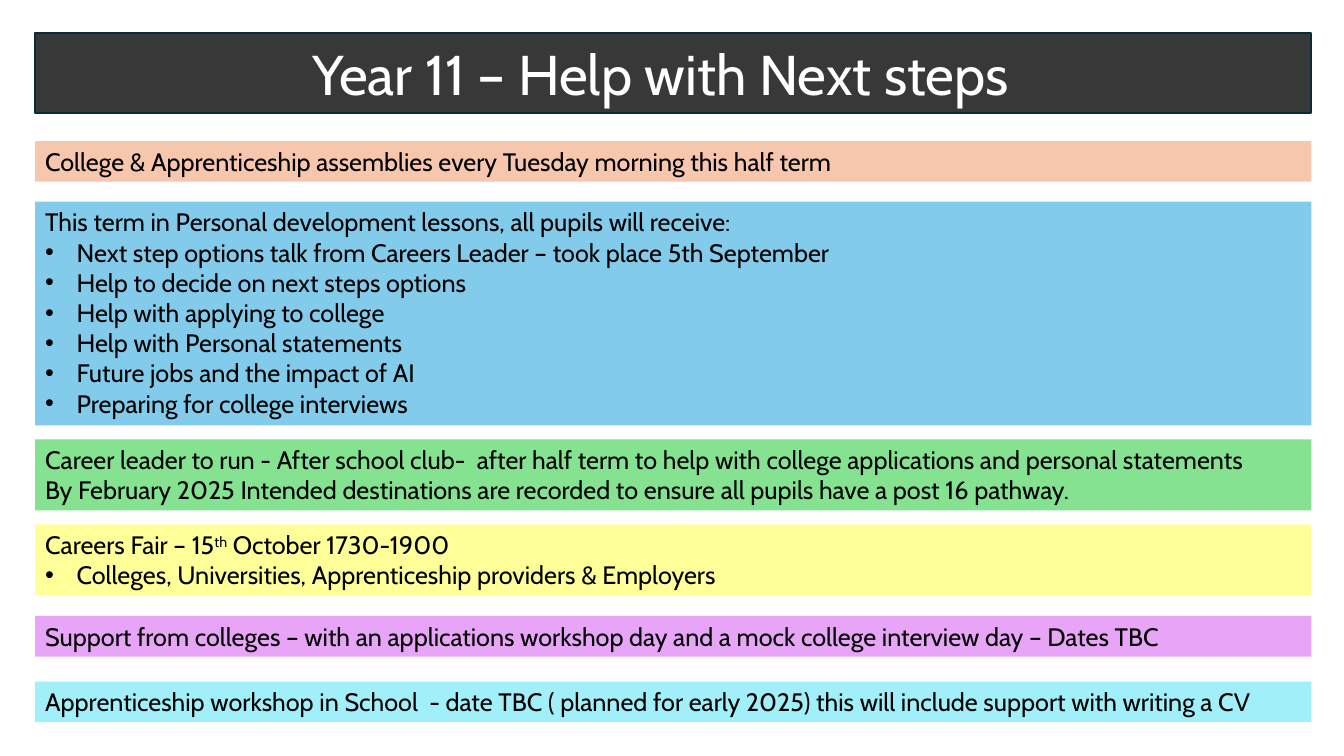
from pptx import Presentation
from pptx.dml.color import RGBColor
from pptx.enum.shapes import MSO_SHAPE
from pptx.enum.text import MSO_ANCHOR, MSO_AUTO_SIZE, PP_ALIGN
from pptx.oxml.ns import qn
from pptx.util import Pt
from lxml import etree

RECT = MSO_SHAPE.RECTANGLE
TOP, MIDDLE = MSO_ANCHOR.TOP, MSO_ANCHOR.MIDDLE
GROW, FIXED = MSO_AUTO_SIZE.SHAPE_TO_FIT_TEXT, MSO_AUTO_SIZE.NONE
LEFT, CENTER = PP_ALIGN.LEFT, PP_ALIGN.CENTER

TITLE = "Year 11 – Help with Next steps"
# Each band: top, colour, plain lines, bulleted lines.
# A line is a string, or a tuple whose second part is raised.
BANDS = [
    (100.8, "peach",
     ["College & Apprenticeship assemblies every Tuesday morning this half term"], []),
    (144, "blue",
     ["This term in Personal development lessons, all pupils will receive:"],
     ["Next step options talk from Careers Leader – took place 5th September",
      "Help to decide on next steps options",
      "Help with applying to college",
      "Help with Personal statements",
      "Future jobs and the impact of AI",
      "Preparing for college interviews"]),
    (313.8, "green",
     ["Career leader to run - After school club-  after half term to help with "
      "college applications and personal statements",
      "By February 2025 Intended destinations are recorded to ensure all pupils "
      "have a post 16 pathway."], []),
    (374.6, "yellow",
     [("Careers Fair – 15", "th", " October 1730-1900")],
     ["Colleges, Universities, Apprenticeship providers & Employers"]),
    (440, "violet",
     ["Support from colleges – with an applications workshop day and a mock "
      "college interview day – Dates TBC"], []),
    (486.8, "cyan",
     ["Apprenticeship workshop in School  - date TBC ( planned for early 2025) "
      "this will include support with writing a CV"], []),
]
COLORS = {
    "white": "FFFFFF", "black": "000000", "dark": "383838", "edge": "092A39",
    "peach": "F6C6AD", "blue": "83CBEB", "green": "84E291",
    "yellow": "FFFF99", "violet": "E8A4F6", "cyan": "A1EFF9",
}
FONT = "Cabin"
SIDE, WIDTH = 25.2, 911.5
LINE, INSET, INDENT = 21.8, 3.6, 22.5


def color(name):
    return RGBColor.from_string(COLORS[name])


def place(shape, top, height):
    shape.left, shape.top = Pt(SIDE), Pt(top)
    shape.width, shape.height = Pt(WIDTH), Pt(height)


def paint(shape, fill):
    shape.fill.solid()
    shape.fill.fore_color.rgb = color(fill)


def style(para, size, ink, align):
    para.alignment = align
    for run in para.runs:
        run.font.name = FONT
        run.font.size = Pt(size)
        run.font.color.rgb = color(ink)


def add_bullet(para):
    props = para._p.get_or_add_pPr()
    props.set("marL", str(Pt(INDENT)))
    props.set("indent", str(-Pt(INDENT)))
    etree.SubElement(props, qn("a:buFont")).set("typeface", "Arial")
    etree.SubElement(props, qn("a:buChar")).set("char", "•")


def write(para, line):
    parts = (line,) if isinstance(line, str) else line
    for i, part in enumerate(parts):
        run = para.add_run()
        run.text = part
        if i == 1:
            run._r.get_or_add_rPr().set("baseline", "30000")


def add_title(slide):
    title = slide.shapes.title
    place(title, 23.8, 56.9)
    paint(title, "dark")
    title.line.color.rgb = color("edge")
    title.line.width = Pt(1.5)
    frame = title.text_frame
    frame.text = TITLE
    frame.auto_size = FIXED
    frame.vertical_anchor = MIDDLE
    frame.margin_right = Pt(25.5)
    style(frame.paragraphs[0], 40, "white", CENTER)


def add_band(slide, top, fill, plain, points):
    lines = plain + points
    band = slide.shapes.add_shape(RECT, 0, 0, 0, 0)
    place(band, top, LINE * len(lines) + 2 * INSET)
    band.shadow.inherit = False
    paint(band, fill)
    band.line.fill.background()
    frame = band.text_frame
    frame.word_wrap = True
    frame.auto_size = GROW
    frame.vertical_anchor = TOP
    for i, line in enumerate(lines):
        para = frame.add_paragraph() if i else frame.paragraphs[0]
        if i >= len(plain):
            add_bullet(para)
        write(para, line)
        style(para, 18, "black", LEFT)


def main():
    deck = Presentation()
    deck.slide_width, deck.slide_height = Pt(960), Pt(540)
    slide = deck.slides.add_slide(deck.slide_layouts[5])
    add_title(slide)
    for band in BANDS:
        add_band(slide, *band)
    deck.save("out.pptx")


if __name__ == "__main__":
    main()
